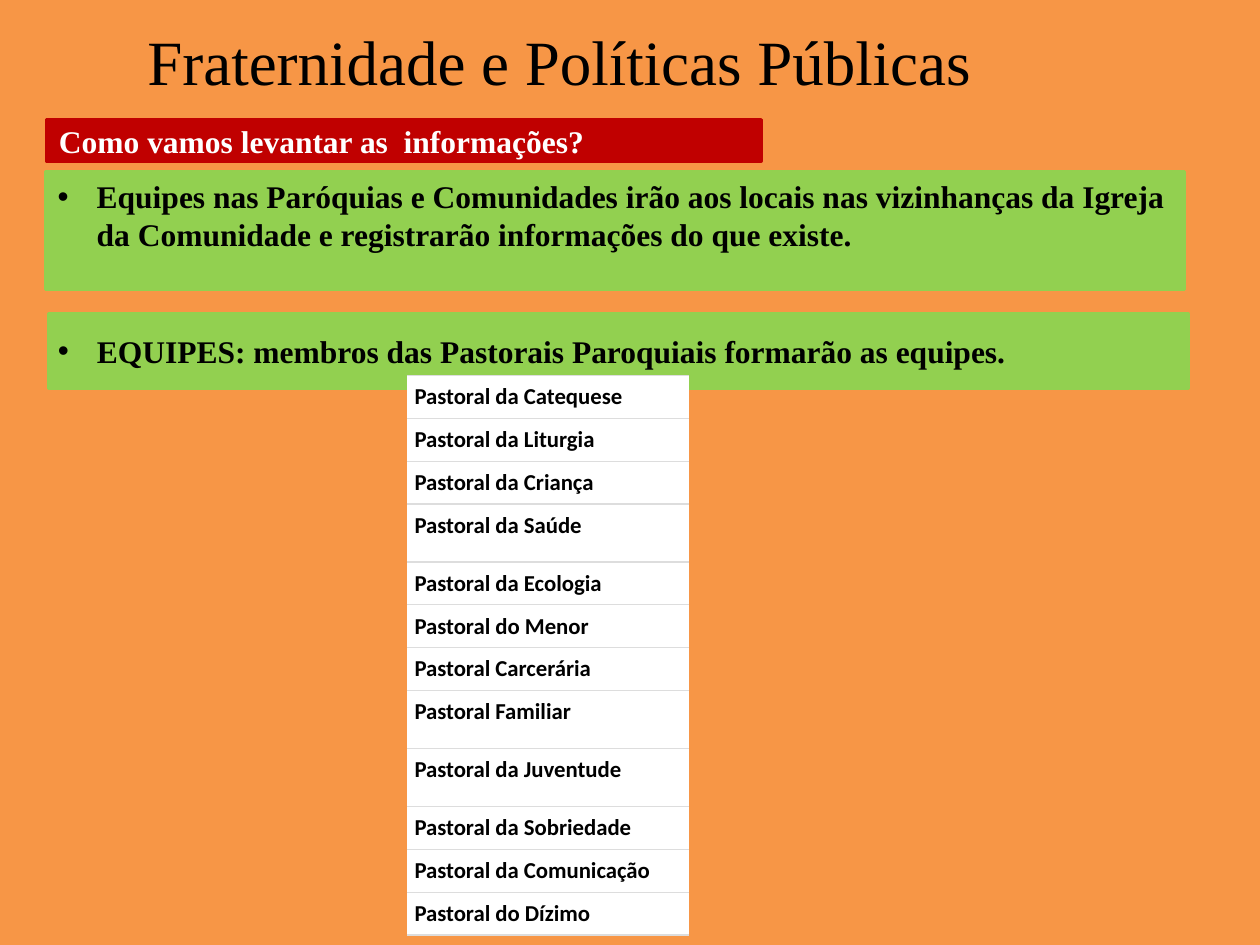
import pptx
import pptx.util
import pptx.dml.color
import pptx.enum.shapes
import pptx.enum.text
import pptx.oxml
import pptx.oxml.ns

WIDTH, HEIGHT = 10, 7.5
SERIF, SANS = "Times New Roman", "Calibri"
COLORS = {
    "background": "F79646",
    "panel": "92D050",
    "banner": "C00000",
    "rule": "DDDDDD",
    "black": "000000",
    "white": "FFFFFF",
}
PASTORALS = [
    "Pastoral da Catequese",
    "Pastoral da Liturgia",
    "Pastoral da Criança",
    "Pastoral da Saúde",
    "Pastoral da Ecologia",
    "Pastoral do Menor",
    "Pastoral Carcerária",
    "Pastoral Familiar",
    "Pastoral da Juventude",
    "Pastoral da Sobriedade",
    "Pastoral da Comunicação",
    "Pastoral do Dízimo",
]
TALL_ROWS = {"Pastoral da Saúde", "Pastoral Familiar", "Pastoral da Juventude"}
ROW_HEIGHT, TALL_ROW_HEIGHT = 0.34, 0.46


def color(name):
    """Return the named colour."""
    return pptx.dml.color.RGBColor.from_string(COLORS[name])


def inches(box):
    """Convert a box in inches to lengths."""
    return [pptx.util.Inches(value) for value in box]


def set_font(paragraph, name, size, color_name, bold=True):
    """Format a whole paragraph, aligned left."""
    paragraph.alignment = pptx.enum.text.PP_ALIGN.LEFT
    paragraph.font.name = name
    paragraph.font.size = pptx.util.Pt(size)
    paragraph.font.bold = bold
    paragraph.font.color.rgb = color(color_name)


def add_bullet(paragraph, indent):
    """Give a paragraph a hanging bullet."""
    properties = paragraph._p.get_or_add_pPr()
    properties.set("marL", str(pptx.util.Inches(indent)))
    properties.set("indent", str(-pptx.util.Inches(indent)))
    properties.append(pptx.oxml.parse_xml(
        f'<a:buFont {pptx.oxml.ns.nsdecls("a")} typeface="Arial"/>'))
    properties.append(pptx.oxml.parse_xml(
        f'<a:buChar {pptx.oxml.ns.nsdecls("a")} char="•"/>'))


def add_title(slide, box, text):
    """Place and format the title placeholder."""
    title = slide.shapes.title
    title.left, title.top, title.width, title.height = inches(box)
    title.text_frame.text = text
    title.text_frame.vertical_anchor = pptx.enum.text.MSO_ANCHOR.TOP
    set_font(title.text_frame.paragraphs[0], SERIF, 36, "black", bold=False)


def add_panel(slide, box, text, fill, text_color, anchor, inset=0.1):
    """Add a filled rectangle with bold text and return its paragraph."""
    shape = slide.shapes.add_shape(
        pptx.enum.shapes.MSO_SHAPE.RECTANGLE, *inches(box))
    shape.shadow.inherit = False
    shape.fill.solid()
    shape.fill.fore_color.rgb = color(fill)
    shape.line.color.rgb = color(fill)
    shape.line.width = pptx.util.Pt(2)
    frame = shape.text_frame
    frame.word_wrap = True
    frame.vertical_anchor = anchor
    frame.margin_left = pptx.util.Inches(inset)
    frame.text = text
    paragraph = frame.paragraphs[0]
    set_font(paragraph, SERIF, 18, text_color)
    return paragraph


def set_borders(cell):
    """Draw thin rules above and below a cell and none at its sides."""
    rule = f'<a:solidFill><a:srgbClr val="{COLORS["rule"]}"/></a:solidFill>'
    sides = {"lnL": "<a:noFill/>", "lnR": "<a:noFill/>", "lnT": rule, "lnB": rule}
    for position, (side, paint) in enumerate(sides.items()):
        cell._tc.get_or_add_tcPr().insert(position, pptx.oxml.parse_xml(
            f'<a:{side} {pptx.oxml.ns.nsdecls("a")} w="{pptx.util.Pt(0.75)}">'
            f'{paint}</a:{side}>'))


def add_pastoral_table(slide, left, top, width):
    """Add the one-column table of pastorals."""
    heights = [TALL_ROW_HEIGHT if name in TALL_ROWS else ROW_HEIGHT
               for name in PASTORALS]
    table = slide.shapes.add_table(
        len(PASTORALS), 1, *inches((left, top, width, sum(heights)))).table
    table.first_row = table.horz_banding = False
    for row, name, height in zip(table.rows, PASTORALS, heights):
        row.height = pptx.util.Inches(height)
        cell = row.cells[0]
        cell.text = name
        cell.margin_left = cell.margin_right = pptx.util.Inches(0.06)
        cell.margin_top = cell.margin_bottom = pptx.util.Inches(0.06)
        cell.fill.solid()
        cell.fill.fore_color.rgb = color("white")
        set_font(cell.text_frame.paragraphs[0], SANS, 13, "black")
        set_borders(cell)


def main():
    """Build and save the slide."""
    presentation = pptx.Presentation()
    presentation.slide_width, presentation.slide_height = inches((WIDTH, HEIGHT))
    slide = presentation.slides.add_slide(presentation.slide_layouts[5])
    slide.background.fill.solid()
    slide.background.fill.fore_color.rgb = color("background")
    anchors = pptx.enum.text.MSO_ANCHOR

    add_title(slide, (1.07, 0.13, 8.19, 0.71), "Fraternidade e Políticas Públicas")
    add_panel(slide, (0.37, 0.95, 5.67, 0.33), "Como vamos levantar as  informações?",
              "banner", "white", anchors.MIDDLE)
    visits = add_panel(
        slide, (0.36, 1.36, 9.04, 0.94),
        "Equipes nas Paróquias e Comunidades irão aos locais nas vizinhanças da Igreja "
        "da Comunidade e registrarão informações do que existe.",
        "panel", "black", anchors.TOP)
    teams = add_panel(
        slide, (0.39, 2.49, 9.04, 0.59),
        "EQUIPES: membros das Pastorais Paroquiais formarão as equipes.",
        "panel", "black", anchors.MIDDLE, inset=0.07)
    for paragraph in (visits, teams):
        add_bullet(paragraph, 0.31)
    add_pastoral_table(slide, 3.23, 2.98, 2.24)
    presentation.save("out.pptx")


if __name__ == "__main__":
    main()
